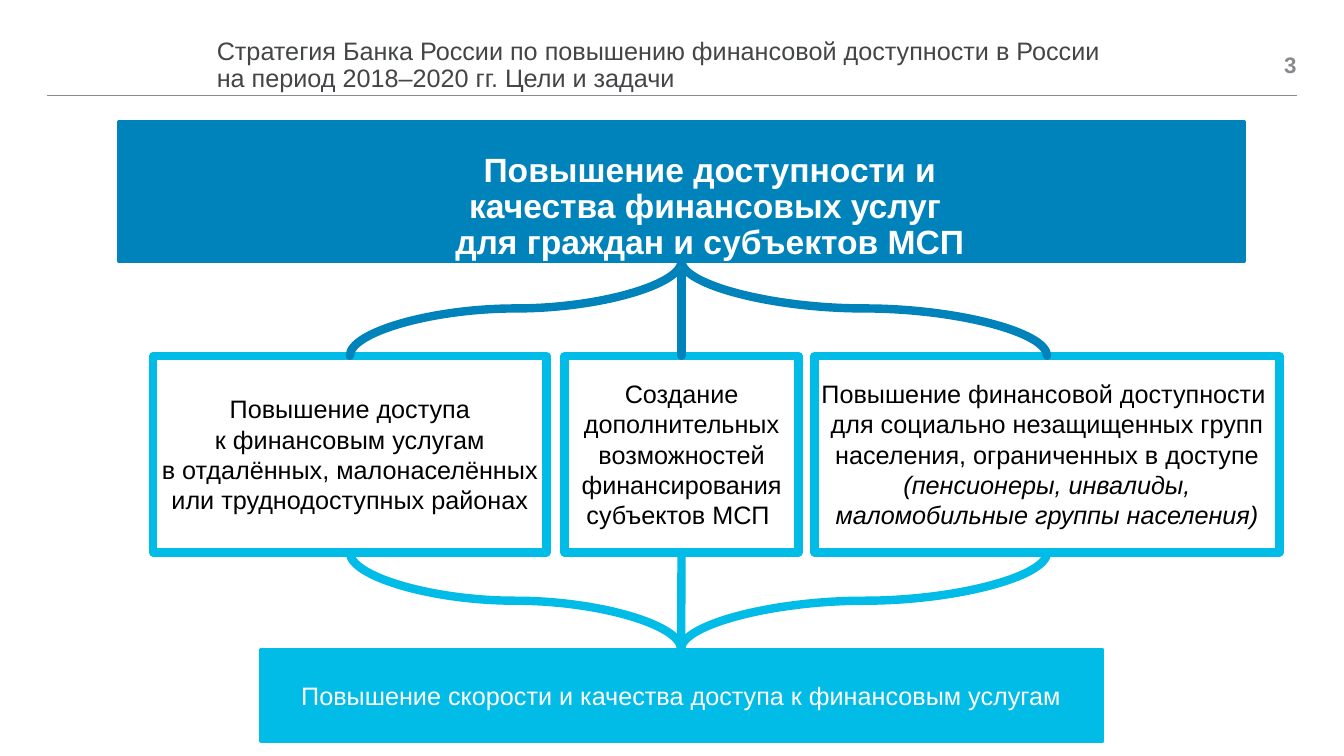
from lxml import etree
from pptx import Presentation
from pptx.dml.color import RGBColor
from pptx.enum.shapes import MSO_CONNECTOR as Connector, MSO_SHAPE as Shape
from pptx.enum.text import MSO_ANCHOR as Anchor, PP_ALIGN as Align
from pptx.oxml.ns import qn
from pptx.util import Inches, Pt

BLUE, CYAN, WHITE, BLACK = "0082BB", "00BCE7", "FFFFFF", "000000"
GREY, DARK_GREY = "888A8D", "444547"
TOP, BOTTOM = 0, 2


def color(value):
    return RGBColor.from_string(value)


class Builder:
    font = "Arial"
    branch_width = 6

    def __init__(self, slide):
        self.slide = slide

    def set_text(self, shape, runs, size, ink, bold=False, align=Align.CENTER,
                 anchor=Anchor.MIDDLE, spacing=None, wrap=True, inset=0):
        """Fill a shape with one paragraph of (text, italic) runs; a newline breaks the line."""
        frame = shape.text_frame
        frame.word_wrap = wrap
        frame.vertical_anchor = anchor
        frame.margin_left = frame.margin_right = 0
        frame.margin_top = frame.margin_bottom = Inches(inset)
        paragraph = frame.paragraphs[0]
        paragraph.alignment = align
        if spacing:
            paragraph.line_spacing = spacing
        for text, italic in runs:
            for index, line in enumerate(text.split("\n")):
                if index:
                    paragraph.add_line_break()
                run = paragraph.add_run()
                run.text = line
                run.font.name = self.font
                run.font.size = Pt(size)
                run.font.bold = bold
                run.font.italic = italic
                run.font.color.rgb = color(ink)

    def text(self, box, text, size, ink, **style):
        shape = self.slide.shapes.add_textbox(*map(Inches, box))
        self.set_text(shape, [(text, False)], size, ink, **style)

    def block(self, box, fill, line, width, runs=(), ink=BLACK):
        shape = self.slide.shapes.add_shape(Shape.RECTANGLE, *map(Inches, box))
        shape.shadow.inherit = False
        shape.fill.solid()
        shape.fill.fore_color.rgb = color(fill)
        shape.line.color.rgb = color(line)
        shape.line.width = Pt(width)
        if runs:
            self.set_text(shape, runs, 18, ink, inset=0.04)
        return shape

    def connector(self, kind, begin, end, ink, width):
        connector = self.slide.shapes.add_connector(kind, *begin, *end)
        connector.line.color.rgb = color(ink)
        connector.line.width = Pt(width)
        etree.SubElement(connector._element.spPr, qn("a:effectLst"))
        return connector

    def branch(self, upper, lower, ink):
        """Join the bottom of one block to the top of another, curving if they are offset."""
        x1, y1 = upper.left + upper.width // 2, upper.top + upper.height
        x2, y2 = lower.left + lower.width // 2, lower.top
        if abs(x2 - x1) < Inches(0.02):
            connector = self.connector(Connector.STRAIGHT, (x1, y1), (x2, y2),
                                       ink, self.branch_width)
            connector.begin_connect(upper, BOTTOM)
            connector.end_connect(lower, TOP)
        else:
            # A curve leaves sideways, so it is laid out on its side and then turned.
            middle_x, middle_y = (x1 + x2) // 2, (y1 + y2) // 2
            half_drop, half_run = (y2 - y1) // 2, abs(x2 - x1) // 2
            rightward = x2 > x1
            reach = half_drop if rightward else -half_drop
            connector = self.connector(
                Connector.CURVE, (middle_x + reach, middle_y - half_run),
                (middle_x - reach, middle_y + half_run), ink, self.branch_width)
            degrees = 270 if rightward else 90
            connector._element.spPr.find(qn("a:xfrm")).set("rot", str(degrees * 60000))
        connector._element.spPr.find(qn("a:ln")).set("cap", "rnd")


def main():
    presentation = Presentation()
    presentation.slide_width, presentation.slide_height = Inches(13.33), Inches(7.5)
    builder = Builder(presentation.slides.add_slide(presentation.slide_layouts[6]))

    builder.connector(Connector.STRAIGHT, (Inches(0.47), Inches(0.95)),
                      (Inches(12.86), Inches(0.95)), GREY, 0.5)
    builder.text((2.15, 0.32, 10.02, 0.66),
                 "Стратегия Банка России по повышению финансовой доступности в России\n"
                 "на период 2018–2020 гг. Цели и задачи",
                 18, DARK_GREY, align=Align.LEFT, spacing=0.9)
    builder.text((12.05, 0.47, 0.81, 0.35), "3", 16, GREY, bold=True, align=Align.RIGHT)

    tasks = [
        (1.52, 3.9, [("Повышение доступа\nк финансовым услугам\n"
                      "в отдалённых, малонаселённых или труднодоступных районах", False)]),
        (5.6, 2.32, [("Создание дополнительных возможностей финансирования "
                      "субъектов МСП ", False)]),
        (8.08, 4.61, [("Повышение финансовой доступности \nдля социально незащищенных "
                       "групп населения, ограниченных в доступе ", False),
                      ("(пенсионеры, инвалиды, маломобильные группы населения)", True)]),
    ]
    task_blocks = [builder.block((left, 3.53, width, 1.95), WHITE, CYAN, 6, runs)
                   for left, width, runs in tasks]
    result = builder.block(
        (2.58, 6.44, 8.35, 0.92), CYAN, CYAN, 2.25,
        [("Повышение скорости и качества доступа к финансовым услугам", False)], WHITE)
    goal = builder.block((1.18, 1.21, 11.16, 1.38), BLUE, BLUE, 2.25)
    builder.text((4.16, 1.52, 5.76, 0.19),
                 "Повышение доступности и качества финансовых услуг \n"
                 "для граждан и субъектов МСП",
                 24, WHITE, bold=True, anchor=Anchor.TOP, spacing=0.9, wrap=False)

    for task in task_blocks:
        builder.branch(goal, task, BLUE)
        builder.branch(task, result, CYAN)

    presentation.save("out.pptx")


if __name__ == "__main__":
    main()
